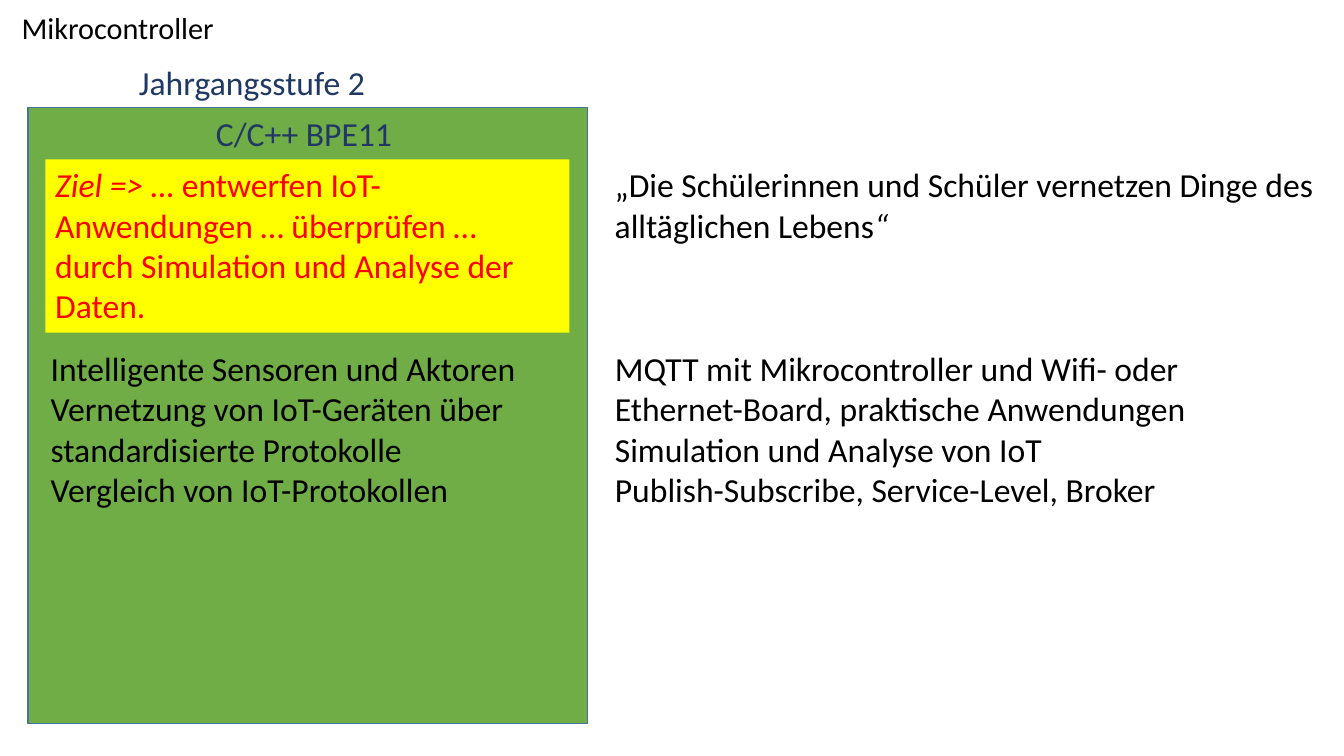
import dataclasses
import pptx
import pptx.dml.color
import pptx.enum.shapes
import pptx.enum.text
import pptx.oxml
import pptx.oxml.ns
import pptx.util

Pt = pptx.util.Pt
Align = pptx.enum.text.PP_ALIGN
Anchor = pptx.enum.text.MSO_ANCHOR
AutoSize = pptx.enum.text.MSO_AUTO_SIZE


@dataclasses.dataclass(frozen=True)
class Theme:
    font: str = "Calibri"
    title_size: float = 21.6
    text_size: float = 24
    black: str = "000000"
    navy: str = "203864"
    red: str = "FF0000"
    yellow: str = "FFFF00"
    green: str = "70AD47"
    outline: str = "43739E"


class SlideBuilder:
    def __init__(self, slide, theme):
        self.slide = slide
        self.theme = theme

    def place(self, shape, box):
        shape.left, shape.top, shape.width, shape.height = map(Pt, box)

    def fill_text(self, shape, paragraphs, color, size=None, align=Align.LEFT,
                  anchor=Anchor.TOP, wrap=True):
        frame = shape.text_frame
        frame.word_wrap = wrap
        frame.auto_size = AutoSize.NONE
        frame.vertical_anchor = anchor
        for index, runs in enumerate(paragraphs):
            paragraph = frame.add_paragraph() if index else frame.paragraphs[0]
            paragraph.alignment = align
            paragraph.space_before = Pt(0)
            for text, italic in runs:
                run = paragraph.add_run()
                run.text = text
                run.font.name = self.theme.font
                run.font.size = Pt(size or self.theme.text_size)
                run.font.italic = italic
                run.font.color.rgb = pptx.dml.color.RGBColor.from_string(color)
        return frame

    def title(self, box, text):
        shape = self.slide.shapes.title
        self.place(shape, box)
        frame = self.fill_text(shape, [[(text, False)]], self.theme.black,
                               self.theme.title_size, Align.CENTER, Anchor.BOTTOM)
        frame.margin_right = Pt(19)
        frame.margin_bottom = Pt(10)
        frame.paragraphs[0].line_spacing = 0.9

    def topics(self, placeholder_index, box, items):
        shape = self.slide.placeholders[placeholder_index]
        self.slide.shapes._spTree.append(shape._element)
        self.place(shape, box)
        frame = self.fill_text(shape, [[(item, False)] for item in items],
                               self.theme.black)
        for paragraph in frame.paragraphs:
            properties = paragraph._p.get_or_add_pPr()
            properties.set("marL", "0")
            properties.set("indent", "0")
            properties.append(pptx.oxml.parse_xml(
                f"<a:buNone {pptx.oxml.ns.nsdecls('a')}/>"))

    def panel(self, box, runs, fill, color, align, outline=None):
        shape = self.slide.shapes.add_shape(
            pptx.enum.shapes.MSO_SHAPE.RECTANGLE, *map(Pt, box))
        shape.shadow.inherit = False
        shape.fill.solid()
        shape.fill.fore_color.rgb = pptx.dml.color.RGBColor.from_string(fill)
        if outline:
            shape.line.color.rgb = pptx.dml.color.RGBColor.from_string(outline)
            shape.line.width = Pt(1)
        else:
            shape.line.fill.background()
        self.fill_text(shape, [runs], color, align=align)

    def text(self, box, runs, color, align=Align.LEFT, wrap=True):
        shape = self.slide.shapes.add_textbox(*map(Pt, box))
        self.fill_text(shape, [runs], color, align=align, wrap=wrap)


def main():
    presentation = pptx.Presentation()
    presentation.slide_width = Pt(960)
    presentation.slide_height = Pt(540)
    theme = Theme()
    slide = presentation.slides.add_slide(
        presentation.slide_layouts.get_by_name("Two Content"))
    builder = SlideBuilder(slide, theme)

    goal_top, topics_top = 113.75, 244.8
    right_column = 432

    builder.title((0, 0, 180, 43.2), "Mikrocontroller")
    builder.panel((20, 77, 399.6, 440), [("C/C++ BPE11 ", False)],
                  theme.green, theme.navy, Align.CENTER, theme.outline)
    builder.text((91.5, 41, 177, 36), [("Jahrgangsstufe 2", False)],
                 theme.navy, Align.CENTER, wrap=False)
    builder.panel(
        (32.4, goal_top, 374.4, 123.85),
        [("Ziel => … ", True),
         ("entwerfen IoT-Anwendungen … überprüfen … durch Simulation "
          "und Analyse der Daten.", False)],
        theme.yellow, theme.red, Align.LEFT)
    builder.text(
        (right_column, goal_top, 519, 65.5),
        [("„Die Schülerinnen und Schüler vernetzen Dinge des "
          "alltäglichen Lebens", False), ("“", True)], theme.black)
    builder.topics(1, (29, topics_top, 378, 123.85), [
        "Intelligente Sensoren und Aktoren",
        "Vernetzung von IoT-Geräten über standardisierte Protokolle",
        "Vergleich von IoT-Protokollen"])
    builder.topics(2, (right_column, topics_top, 480, 123.85), [
        "MQTT mit Mikrocontroller und Wifi- oder Ethernet-Board, "
        "praktische Anwendungen",
        "Simulation und Analyse von IoT",
        "Publish-Subscribe, Service-Level, Broker"])

    presentation.save("out.pptx")


if __name__ == "__main__":
    main()
